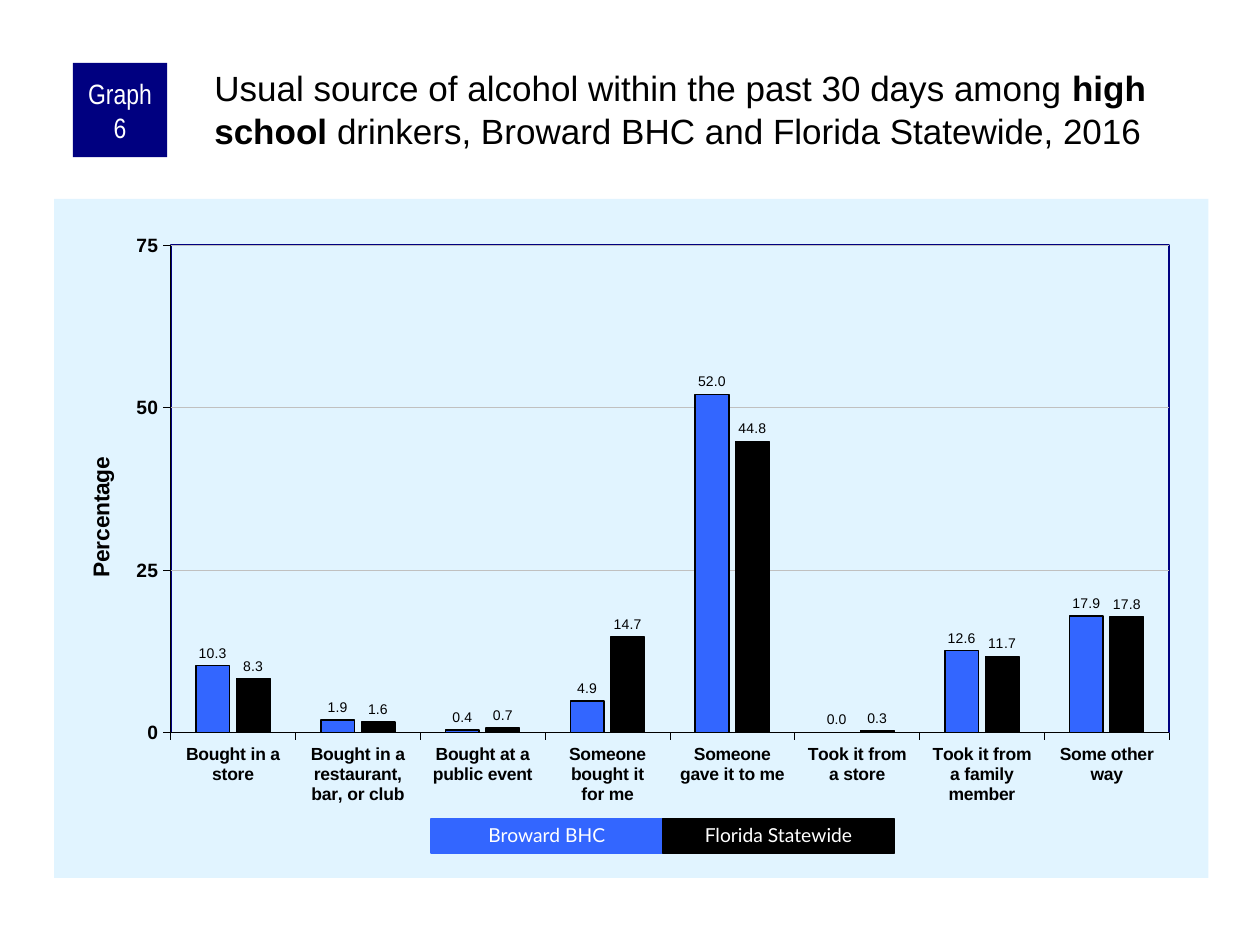
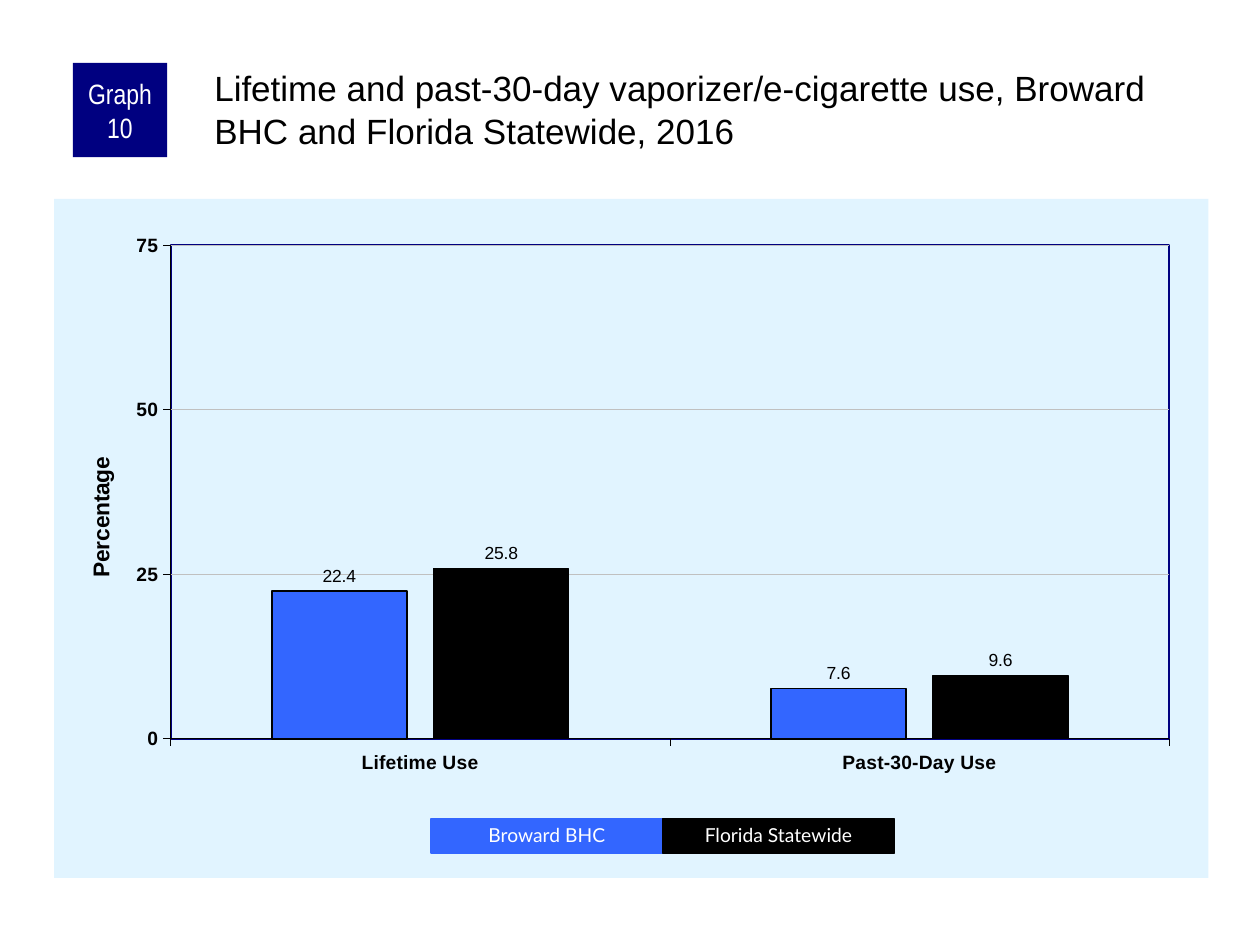
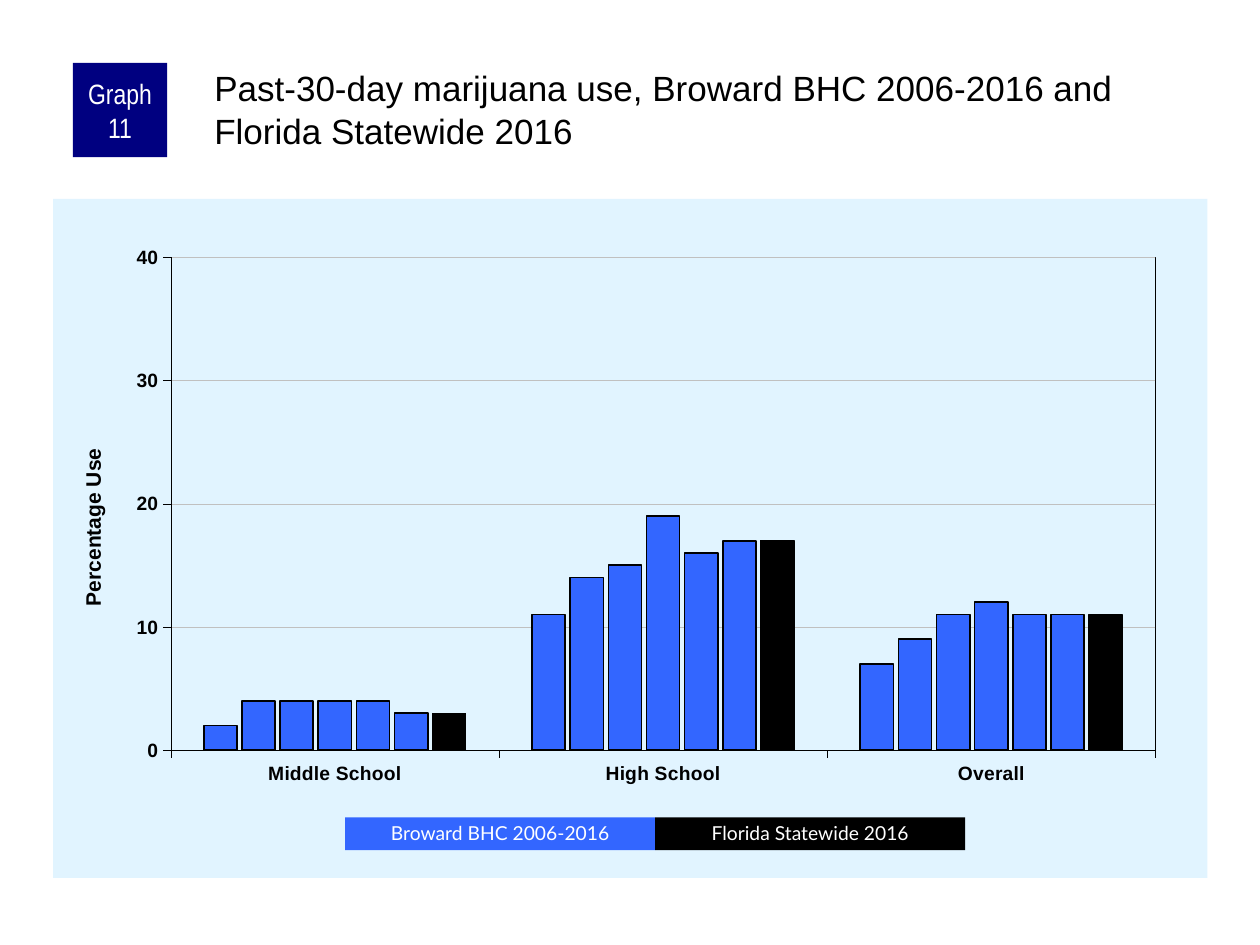
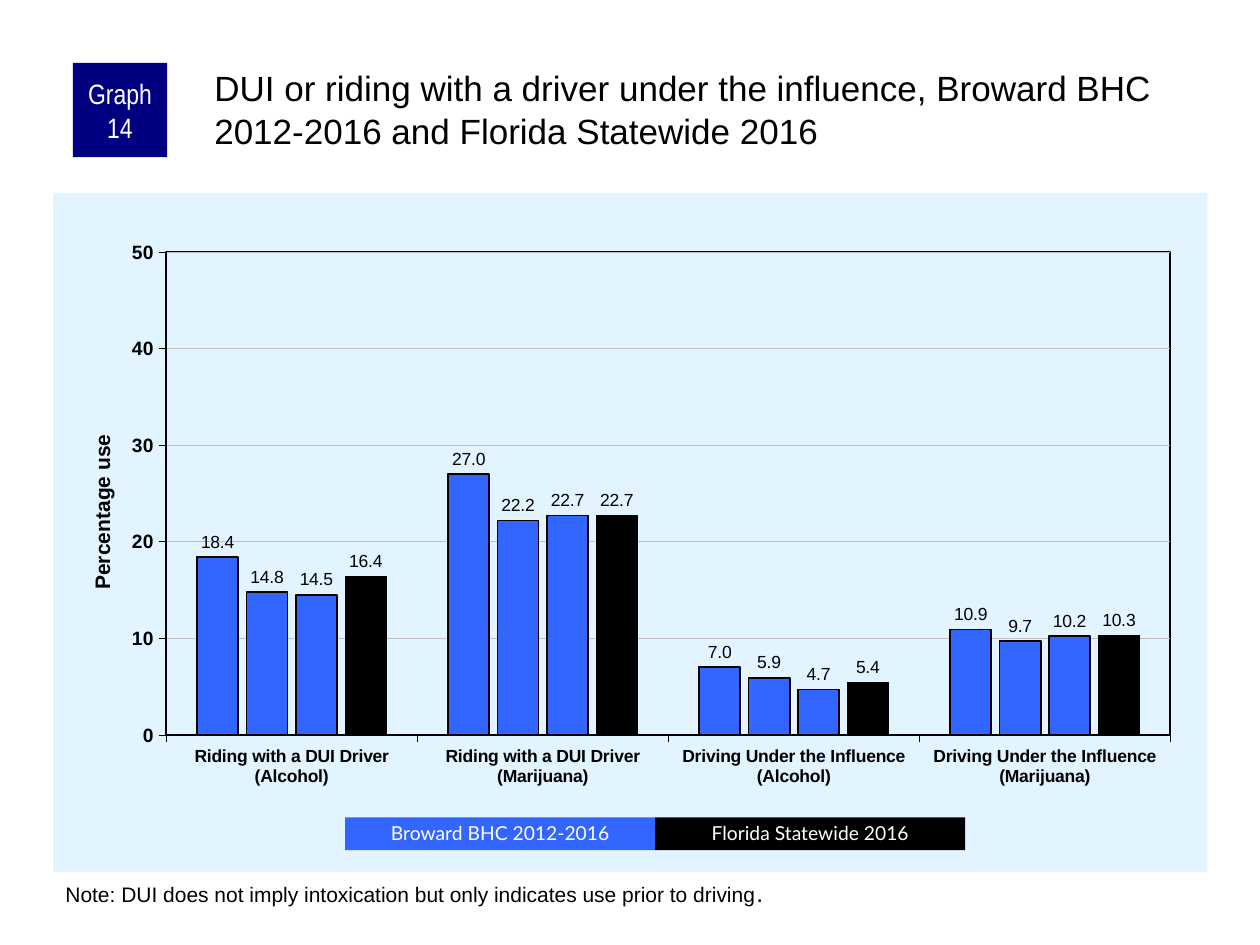
import pptx
import pptx.chart.data
import pptx.dml.color
import pptx.enum.chart
import pptx.enum.shapes
import pptx.enum.text
import pptx.oxml
import pptx.oxml.ns
import pptx.util

Cm = pptx.util.Cm
Pt = pptx.util.Pt
RGBColor = pptx.dml.color.RGBColor

# Colours and fonts
NAVY = RGBColor(0x00, 0x00, 0x80)
BLUE = RGBColor(0x33, 0x66, 0xFF)
BLACK = RGBColor(0x00, 0x00, 0x00)
WHITE = RGBColor(0xFF, 0xFF, 0xFF)
GRID_GREY = RGBColor(0xC0, 0xC0, 0xC0)
PANEL = RGBColor(0xE1, 0xF4, 0xFF)
BODY_FONT, BADGE_FONT, LEGEND_FONT = "Arial", "Arial Narrow", "Lato"

# Legend bands: left, top, width of one box, height, outline
SHORT_LEGEND = (8.69, 16.51, 4.67, 0.69, True)
LONG_LEGEND = (6.96, 16.48, 6.25, 0.66, False)
CHART_SIZE = (23.27, 13.69)

# Content: the last series is always the statewide one
GRAPHS = [
    {
        "badge": "Graph 6",
        "title": [("Usual source of alcohol within the past 30 days among ", False),
                  ("high school", True),
                  (" drinkers, Broward BHC and Florida Statewide, 2016", False)],
        "categories": ["Bought in a store", "Bought in a restaurant, bar, or club",
                       "Bought at a public event", "Someone bought it\nfor me",
                       "Someone\ngave it to me", "Took it from\na store",
                       "Took it from\na family member", "Some other way"],
        "series": [(10.3, 1.9, 0.4, 4.9, 52, 0, 12.6, 17.9),
                   (8.3, 1.6, 0.7, 14.7, 44.8, 0.3, 11.7, 17.8)],
        "chart_at": (1.09, 4.01), "plot": (0.101, 0.068, 0.865, 0.718),
        "border": (NAVY, 1), "gap": 150, "overlap": -20,
        "category_size": 10, "label_size": 8,
        "axis": ("Percentage", 13, 0.025, 0.374), "scale": (75, 25),
        "legend": SHORT_LEGEND, "names": ("Broward BHC", "Florida Statewide"),
    },
    {
        "badge": "Graph 10",
        "title": [("Lifetime and past-30-day vaporizer/e-cigarette use, "
                   "Broward BHC and Florida Statewide, 2016", False)],
        "categories": ["Lifetime Use", "Past-30-Day Use"],
        "series": [(22.4, 7.6), (25.8, 9.6)],
        "chart_at": (1.09, 4.01), "plot": (0.101, 0.068, 0.865, 0.727),
        "border": (NAVY, 1), "gap": 150, "overlap": -20,
        "category_size": 11, "label_size": 10,
        "axis": ("Percentage", 13, 0.025, 0.374), "scale": (75, 25),
        "legend": SHORT_LEGEND, "names": ("Broward BHC", "Florida Statewide"),
    },
    {
        "badge": "Graph 11",
        "title": [("Past-30-day marijuana use, Broward BHC 2006-2016 and "
                   "Florida Statewide 2016", False)],
        "categories": ["Middle School", "High School", "Overall"],
        "series": [(2, 11, 7), (4, 14, 9), (4, 15, 11), (4, 19, 12),
                   (4, 16, 11), (3, 17, 11), (3, 17, 11)],
        "chart_at": (1.07, 4.01), "plot": (0.102, 0.086, 0.853, 0.726),
        "border": (BLACK, 0.25), "gap": 200, "overlap": -15,
        "category_size": 11, "label_size": None,
        "axis": ("Percentage Use", 12, 0.02, 0.362), "scale": (40, 10),
        "legend": LONG_LEGEND,
        "names": ("Broward BHC 2006-2016", "Florida Statewide 2016"),
    },
    {
        "badge": "Graph 14",
        "title": [("DUI or riding with a driver under the influence, Broward BHC "
                   "2012-2016 and Florida Statewide 2016", False)],
        "categories": ["Riding with a DUI Driver (Alcohol)",
                       "Riding with a DUI Driver (Marijuana)",
                       "Driving Under the Influence (Alcohol)",
                       "Driving Under the Influence (Marijuana)"],
        "series": [(18.4, 27, 7, 10.9), (14.8, 22.2, 5.9, 9.7),
                   (14.5, 22.7, 4.7, 10.2), (16.4, 22.7, 5.4, 10.3)],
        "chart_at": (1.07, 3.89), "plot": (0.098, 0.087, 0.87, 0.711),
        "border": (BLACK, 1), "gap": 150, "overlap": -20,
        "category_size": 10, "label_size": 10,
        "axis": ("Percentage use", 12, 0.028, 0.35), "scale": (50, 10),
        "legend": LONG_LEGEND,
        "names": ("Broward BHC 2012-2016", "Florida Statewide 2016"),
        "note": [("Note: DUI does not imply intoxication but only indicates "
                  "use prior to driving", 12), (".", 14)],
    },
]


def set_font(font, size, color=BLACK, name=BODY_FONT, bold=False):
    font.size, font.name, font.bold = Pt(size), name, bold
    font.color.rgb = color


def set_line(line, color, width):
    line.color.rgb = color
    line.width = Pt(width)


def place(shape, left, top, width, height):
    shape.left, shape.top = Cm(left), Cm(top)
    shape.width, shape.height = Cm(width), Cm(height)


def chart_xml(tag, content):
    """Parse one chart element with its namespaces declared."""
    namespaces = pptx.oxml.ns.nsdecls("c", "a")
    return pptx.oxml.parse_xml(f"<c:{tag} {namespaces}>{content}</c:{tag}>")


def set_layout(parent, index, inner=False, **fractions):
    """Give a chart part a fixed place, as fractions of the chart."""
    for layout in parent.findall(pptx.oxml.ns.qn("c:layout")):
        parent.remove(layout)
    content = '<c:layoutTarget val="inner"/>' if inner else ""
    content += "".join(f'<c:{key}Mode val="edge"/>' for key in "xy")
    content += "".join(f'<c:{key} val="{value}"/>' for key, value in fractions.items())
    parent.insert(index, chart_xml("layout", f"<c:manualLayout>{content}</c:manualLayout>"))


def add_box(slide, text, box, fill, size, font_name, outlined=False):
    shape = slide.shapes.add_shape(
        pptx.enum.shapes.MSO_SHAPE.RECTANGLE, *[Cm(value) for value in box])
    shape.shadow.inherit = False
    shape.fill.solid()
    shape.fill.fore_color.rgb = fill
    if outlined:
        set_line(shape.line, fill, 0.75)
    else:
        shape.line.fill.background()
    text_frame = shape.text_frame
    text_frame.text = text
    text_frame.word_wrap = True
    text_frame.vertical_anchor = pptx.enum.text.MSO_ANCHOR.MIDDLE
    paragraph = text_frame.paragraphs[0]
    paragraph.alignment = pptx.enum.text.PP_ALIGN.CENTER
    set_font(paragraph.runs[0].font, size, WHITE, font_name)
    return shape


def add_title(slide, parts):
    title = slide.shapes.title
    place(title, 4.24, 1.27, 20.12, 2.11)
    text_frame = title.text_frame
    text_frame.auto_size = pptx.enum.text.MSO_AUTO_SIZE.NONE
    text_frame.vertical_anchor = pptx.enum.text.MSO_ANCHOR.TOP
    text_frame.margin_left = text_frame.margin_top = Cm(0.08)
    text_frame.margin_right = text_frame.margin_bottom = 0
    paragraph = text_frame.paragraphs[0]
    paragraph.alignment = pptx.enum.text.PP_ALIGN.LEFT
    for text, bold in parts:
        run = paragraph.add_run()
        run.text = text
        set_font(run.font, 20, bold=bold)


def add_badge(slide, text):
    badge = add_box(slide, text, (1.47, 1.27, 1.9, 1.9), NAVY, 16, BADGE_FONT)
    text_frame = badge.text_frame
    text_frame.margin_left = text_frame.margin_right = Cm(0.13)
    text_frame.margin_top = text_frame.margin_bottom = 0


def add_legend(slide, names, legend):
    left, top, width, height, outlined = legend
    for index, (name, color) in enumerate(zip(names, (BLUE, BLACK))):
        box = (left + index * width, top, width, height)
        shape = add_box(slide, name, box, color, 11, LEGEND_FONT, outlined)
        shape.text_frame.paragraphs[0].line_spacing = 0.9


def style_axes(chart, graph):
    for axis, size in ((chart.category_axis, graph["category_size"]),
                       (chart.value_axis, 11)):
        set_font(axis.tick_labels.font, size, bold=True)
        set_line(axis.format.line, BLACK, 0.25)
        axis.major_tick_mark = pptx.enum.chart.XL_TICK_MARK.OUTSIDE
    value_axis = chart.value_axis
    value_axis.minimum_scale = 0
    value_axis.maximum_scale, value_axis.major_unit = graph["scale"]
    value_axis.tick_labels.number_format = "0"
    value_axis.tick_labels.number_format_is_linked = False
    set_line(value_axis.major_gridlines.format.line, GRID_GREY, 0.25)
    text, size, x, y = graph["axis"]
    axis_title = value_axis.axis_title
    axis_title.text_frame.text = text
    set_font(axis_title.text_frame.paragraphs[0].runs[0].font, size, bold=True)
    set_layout(axis_title._element, 1, x=x, y=y)


def style_series(series, color, label_size):
    series.format.fill.solid()
    series.format.fill.fore_color.rgb = color
    set_line(series.format.line, BLACK, 1 if color == BLUE else 0.75)
    series.invert_if_negative = False
    if label_size:
        labels = series.data_labels
        labels.show_value = True
        labels.number_format = "0.0"
        labels.number_format_is_linked = False
        labels.position = pptx.enum.chart.XL_LABEL_POSITION.OUTSIDE_END
        set_font(labels.font, label_size)


def add_column_chart(slide, graph):
    data = pptx.chart.data.CategoryChartData()
    data.categories = graph["categories"]
    for number, values in enumerate(graph["series"], 1):
        data.add_series(f"Series {number}", values)
    chart = slide.shapes.add_chart(
        pptx.enum.chart.XL_CHART_TYPE.COLUMN_CLUSTERED,
        *[Cm(value) for value in graph["chart_at"] + CHART_SIZE], data).chart
    chart.has_legend = chart.has_title = False
    set_font(chart.font, 11.5)

    # Columns
    plot = chart.plots[0]
    plot.gap_width, plot.overlap = graph["gap"], graph["overlap"]
    plot.vary_by_categories = False
    last = len(graph["series"]) - 1
    for index, series in enumerate(plot.series):
        style_series(series, BLACK if index == last else BLUE, graph["label_size"])
    style_axes(chart, graph)

    # Panel colour, plot place and plot border
    chart_element = chart._chartSpace.chart
    chart_element.addnext(chart_xml(
        "spPr", f'<a:solidFill><a:srgbClr val="{PANEL}"/></a:solidFill>'
                "<a:ln><a:noFill/></a:ln>"))
    plot_area = chart_element.plotArea
    set_layout(plot_area, 0, inner=True, **dict(zip("xywh", graph["plot"])))
    color, width = graph["border"]
    plot_area.append(chart_xml(
        "spPr", f'<a:noFill/><a:ln w="{Pt(width)}"><a:solidFill>'
                f'<a:srgbClr val="{color}"/></a:solidFill></a:ln>'))


def add_note(slide, parts):
    note = slide.shapes.add_textbox(Cm(1.07), Cm(17.58), Cm(23.29), Cm(0.86))
    note.text_frame.word_wrap = True
    for text, size in parts:
        run = note.text_frame.paragraphs[0].add_run()
        run.text = text
        set_font(run.font, size)


def main():
    presentation = pptx.Presentation()
    presentation.slide_width, presentation.slide_height = Cm(25.4), Cm(19.05)
    title_only = presentation.slide_layouts.get_by_name("Title Only")
    for graph in GRAPHS:
        slide = presentation.slides.add_slide(title_only)
        add_title(slide, graph["title"])
        add_column_chart(slide, graph)
        add_badge(slide, graph["badge"])
        add_legend(slide, graph["names"], graph["legend"])
        if "note" in graph:
            add_note(slide, graph["note"])
    presentation.save("out.pptx")


if __name__ == "__main__":
    main()
